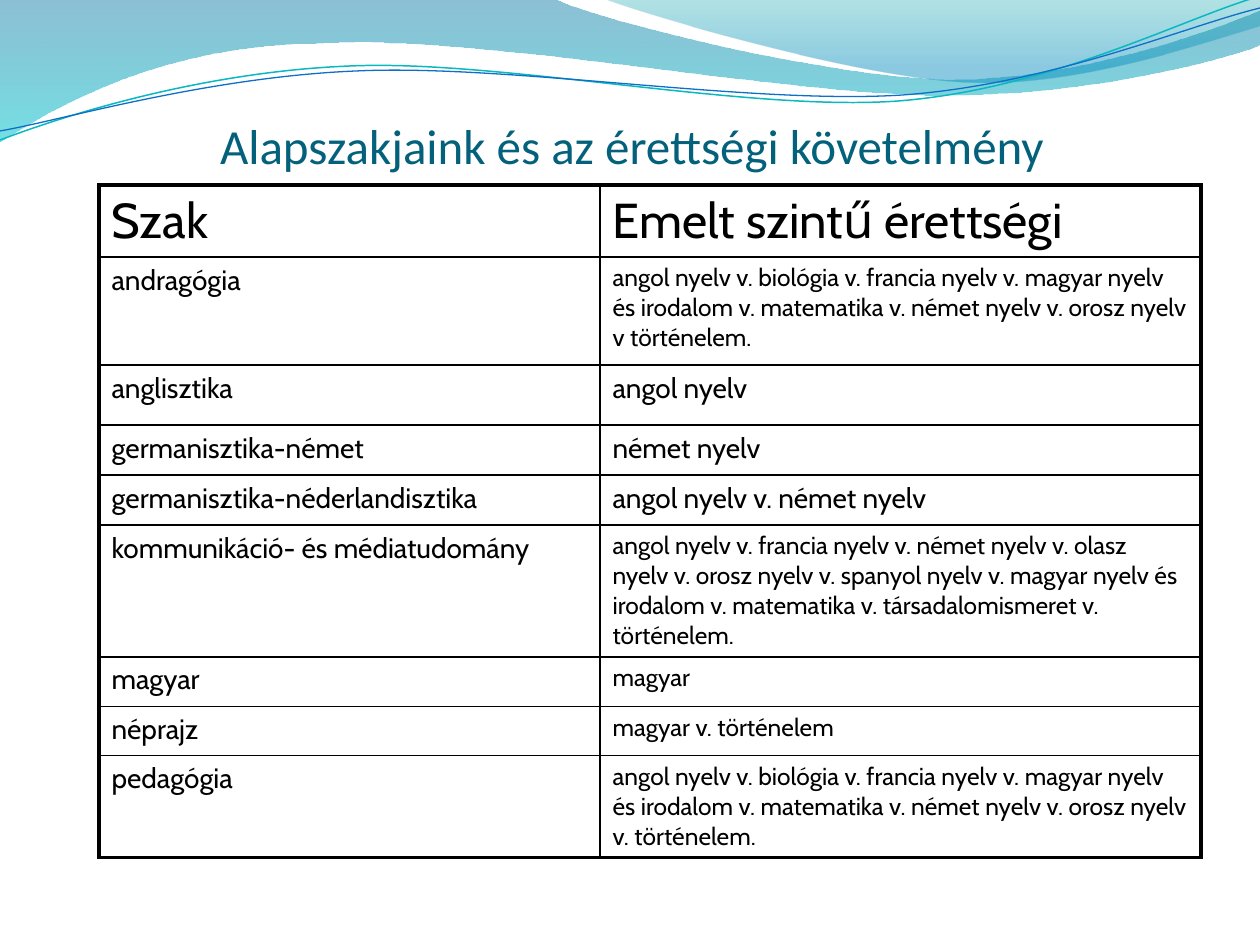
from lxml import etree
from pptx import Presentation, util as u
from pptx.dml.color import RGBColor
from pptx.enum import text
from pptx.oxml import parse_xml
from pptx.oxml.ns import nsdecls, qn

PX = 914400 // 126
COLORS = {
    "title": "04617B", "ink": "000000",
    "deep": "0074A1", "aqua": "00C6CF", "teal": "00A1A9", "sky": "008BBF",
    "teal_line": "0AB8BF", "blue_line": "0F6FC6",
}

LEFT_WAVE = [
    (0, -1), (554, -1),
    (600, 21, 837, 79, 955, 79), (1075, 79, 1207, 33, 1260, 11),
    (1261, 45),
    (1239, 55, 1096, 96, 940, 95), (784, 95, 481, 35, 324, 43),
    (163, 44, 58, 105, -1, 142),
]
RIGHT_WAVE = [
    (604, -1),
    (641, 14, 859, 78, 969, 82), (1079, 87, 1211, 40, 1260, 26),
    (1260, 0),
]
TEAL_CURVE = [
    (0, 140),
    (60, 117, 199, 72, 349, 66), (498, 59, 747, 112, 898, 101),
    (1050, 89, 1182, 19, 1257, -3),
]
BLUE_CURVE = [
    (0, 131),
    (59, 121, 207, 77, 357, 71), (508, 64, 752, 105, 903, 95),
    (1053, 84, 1186, 26, 1260, 8),
]

SUBJECTS = [
    ("Szak", 28, "Emelt szintű érettségi", 28, 72),
    ("andragógia", 16, "angol nyelv v. biológia v. francia nyelv v. magyar nyelv és irodalom "
     "v. matematika v. német nyelv v. orosz nyelv v történelem.", 14, 108),
    ("anglisztika", 16, "angol nyelv", 16, 60),
    ("germanisztika-német", 16, "német nyelv", 16, 50),
    ("germanisztika-néderlandisztika", 16, "angol nyelv v. német nyelv", 16, 50),
    ("kommunikáció- és médiatudomány", 16, "angol nyelv v. francia nyelv v. német nyelv "
     "v. olasz nyelv v. orosz nyelv v. spanyol nyelv v. magyar nyelv és irodalom "
     "v. matematika v. társadalomismeret v. történelem.", 14, 132),
    ("magyar", 16, "magyar", 14, 50),
    ("néprajz", 16, "magyar v. történelem", 14, 49),
    ("pedagógia", 16, "angol nyelv v. biológia v. francia nyelv v. magyar nyelv és irodalom "
     "v. matematika v. német nyelv v. orosz nyelv v. történelem.", 14, 102),
]


def px(length):
    return u.Emu(length * PX)


def color(name):
    return RGBColor.from_string(COLORS[name])


def add_outline(slide, route, close):
    anchors = [segment[-2:] for segment in route]
    builder = slide.shapes.build_freeform(*anchors[0], scale=PX)
    builder.add_line_segments(anchors[1:], close=close)
    outline = builder.convert_to_shape()
    outline.shadow.inherit = False
    left = min(x for x, y in anchors)
    top = min(y for x, y in anchors)
    sides = list(outline._element.iter(qn("a:lnTo")))
    for side, segment in zip(sides, route[1:]):
        if len(segment) == 6:
            bend = etree.Element(qn("a:cubicBezTo"))
            for x, y in zip(segment[::2], segment[1::2]):
                etree.SubElement(bend, qn("a:pt"), x=str(x - left), y=str(y - top))
            side.getparent().replace(side, bend)
    return outline


def add_wave(slide, route, stops):
    wave = add_outline(slide, route, True)
    wave.line.fill.background()
    wave.fill.gradient()
    wave.fill.gradient_angle = 270
    gradient_stops = wave._element.spPr.find(qn("a:gradFill")).find(qn("a:gsLst"))
    for stop in list(gradient_stops):
        gradient_stops.remove(stop)
    for position, name, opacity in stops:
        gradient_stops.append(parse_xml(
            f'<a:gs {nsdecls("a")} pos="{position * 1000}"><a:srgbClr val="{COLORS[name]}">'
            f'<a:alpha val="{opacity * 1000}"/></a:srgbClr></a:gs>'))


def add_curve(slide, route, name, width):
    curve = add_outline(slide, route, False)
    curve.fill.background()
    curve.line.color.rgb = color(name)
    curve.line.width = u.Pt(width)


def style(paragraph, font_name, size, name):
    for run in paragraph.runs:
        run.font.name = font_name
        run.font.size = u.Pt(size)
        run.font.color.rgb = color(name)


def add_title(slide, words):
    frame = slide.shapes.add_textbox(px(220), px(42), px(1040), px(132)).text_frame
    frame.word_wrap = True
    frame.vertical_anchor = text.MSO_ANCHOR.BOTTOM
    frame.margin_left = frame.margin_right = frame.margin_bottom = 0
    frame.text = words
    style(frame.paragraphs[0], "Calibri", 28, "title")


def set_borders(cell, widths):
    properties = cell._tc.get_or_add_tcPr()
    for index, (side, width) in enumerate(widths.items()):
        border = etree.Element(qn(f"a:ln{side}"), w=str(u.Pt(width)))
        fill = etree.SubElement(border, qn("a:solidFill"))
        etree.SubElement(fill, qn("a:srgbClr"), val=COLORS["ink"])
        properties.insert(index, border)


def add_requirements(slide):
    heights = [row[-1] for row in SUBJECTS]
    columns = (501, 601)
    table = slide.shapes.add_table(len(SUBJECTS), 2, px(99), px(185),
                                   px(sum(columns)), px(sum(heights))).table
    table.first_row = table.horz_banding = False
    for column, width in zip(table.columns, columns):
        column.width = px(width)
    last = len(SUBJECTS) - 1
    for r, (subject, subject_size, exam, exam_size, height) in enumerate(SUBJECTS):
        table.rows[r].height = px(height)
        for c, (words, size) in enumerate(((subject, subject_size), (exam, exam_size))):
            cell = table.cell(r, c)
            cell.text = words
            style(cell.text_frame.paragraphs[0], "Cabin", size, "ink")
            cell.fill.background()
            outer = {"L": c == 0, "R": c == 1, "T": r == 0, "B": r == last}
            set_borders(cell, {side: 2.25 if edge else 1 for side, edge in outer.items()})


def main():
    deck = Presentation()
    deck.slide_width, deck.slide_height = px(1260), px(945)
    slide = deck.slides.add_slide(deck.slide_layouts[6])
    add_wave(slide, LEFT_WAVE, [(0, "deep", 45), (100, "aqua", 55)])
    add_wave(slide, RIGHT_WAVE, [(0, "teal", 30), (80, "sky", 45)])
    add_curve(slide, TEAL_CURVE, "teal_line", 0.85)
    add_curve(slide, BLUE_CURVE, "blue_line", 0.75)
    add_title(slide, "Alapszakjaink és az érettségi követelmény")
    add_requirements(slide)
    deck.save("out.pptx")


if __name__ == "__main__":
    main()
